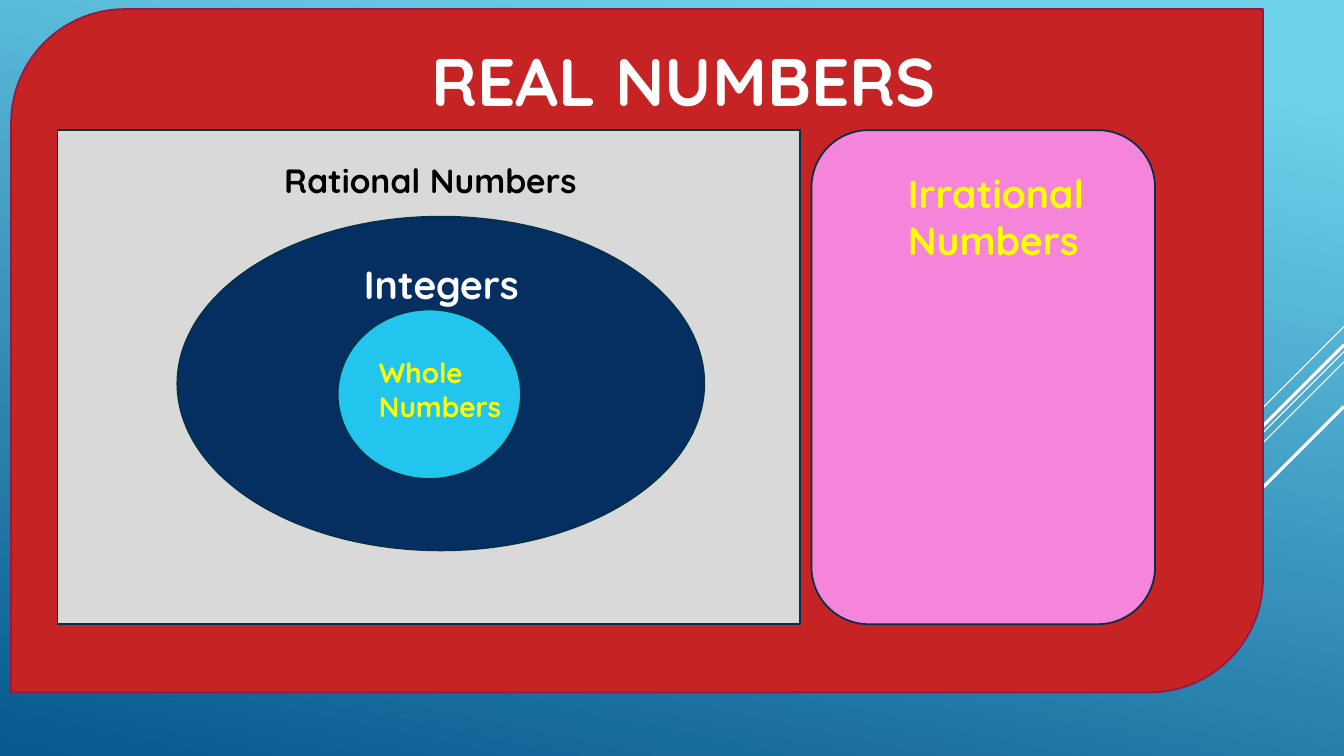
from lxml.etree import SubElement
from pptx import Presentation
from pptx.dml.color import RGBColor
from pptx.enum.shapes import MSO_CONNECTOR, MSO_SHAPE
from pptx.enum.text import MSO_ANCHOR, MSO_AUTO_SIZE, PP_ALIGN
from pptx.oxml.ns import qn
from pptx.util import Cm, Pt

WIDTH, HEIGHT = 33.87, 19.05
WHITE, BLACK, YELLOW, NAVY = "FFFFFF", "000000", "FFFF00", "043148"


def color(value):
    return RGBColor.from_string(value)


class SetDiagram:
    """Draws on one slide with a shared font and outline; lengths in cm."""

    font_name = "Quicksand"
    outline_width = 1.25

    def __init__(self, page):
        self.page = page

    def background(self, start, end, angle):
        fill = self.page.background.fill
        fill.gradient()
        fill.gradient_angle = angle
        for stop, (position, value) in zip(fill.gradient_stops, (start, end)):
            stop.position = position
            stop.color.rgb = color(value)

    def diagonal(self, top, length, width):
        """A 45 degree line running down and left from the right edge."""
        line = self.page.shapes.add_connector(
            MSO_CONNECTOR.STRAIGHT, Cm(WIDTH), Cm(top),
            Cm(WIDTH - length), Cm(top + length))
        line.line.color.rgb = color(WHITE)
        line.line.width = Pt(width)
        SubElement(line.element.spPr, qn("a:effectLst"))

    def region(self, kind, bounds, fill, outline=NAVY):
        shape = self.page.shapes.add_shape(kind, *map(Cm, bounds))
        shape.shadow.inherit = False
        shape.fill.solid()
        shape.fill.fore_color.rgb = color(fill)
        shape.line.color.rgb = color(outline)
        shape.line.width = Pt(self.outline_width)

    def set_text(self, frame, text, size, value, align=PP_ALIGN.LEFT):
        frame.text = text
        frame.word_wrap = True
        for paragraph in frame.paragraphs:
            paragraph.alignment = align
            paragraph.font.name = self.font_name
            paragraph.font.size = Pt(size)
            paragraph.font.bold = True
            paragraph.font.color.rgb = color(value)

    def title(self, text, bounds, size, value):
        title = self.page.shapes.title
        title.left, title.top, title.width, title.height = map(Cm, bounds)
        self.set_text(title.text_frame, text, size, value, PP_ALIGN.CENTER)
        title.text_frame.vertical_anchor = MSO_ANCHOR.MIDDLE
        title.text_frame.auto_size = MSO_AUTO_SIZE.NONE
        # Bring the title in front of the regions drawn so far
        title.element.getparent().append(title.element)

    def label(self, text, bounds, size, value):
        box = self.page.shapes.add_textbox(*map(Cm, bounds))
        self.set_text(box.text_frame, text, size, value)
        box.text_frame.auto_size = MSO_AUTO_SIZE.SHAPE_TO_FIT_TEXT


def main():
    deck = Presentation()
    deck.slide_width, deck.slide_height = Cm(WIDTH), Cm(HEIGHT)
    diagram = SetDiagram(deck.slides.add_slide(deck.slide_layouts[5]))

    # Backdrop
    diagram.background((0.1, "6ED2EB"), (1, "06588E"), 258)
    for top, length, width in ((8.23, 2.54, 0.75), (8.86, 8.28, 0.75),
                               (9.12, 5.26, 0.75), (8.69, 4.85, 2.25),
                               (10.24, 3.53, 2.25)):
        diagram.diagonal(top, length, width)

    # Real numbers
    diagram.region(MSO_SHAPE.ROUND_2_DIAG_RECTANGLE,
                   (0.28, 0.23, 31.55, 17.22), "C62324", "921A46")
    diagram.title("REAL NUMBERS", (5.38, -0.1, 23.7, 4.19), 48, WHITE)

    # Rational numbers, with integers and whole numbers nested inside
    diagram.region(MSO_SHAPE.RECTANGLE, (1.45, 3.28, 18.72, 12.45), "D9D9D9")
    diagram.region(MSO_SHAPE.OVAL, (4.47, 5.46, 13.28, 8.41), "052F61")
    diagram.region(MSO_SHAPE.OVAL, (8.51, 7.8, 4.62, 4.27), "22C5ED")
    diagram.label("Whole\nNumbers", (9.3, 8.84, 3.96, 1.96), 20, YELLOW)
    diagram.label("Integers", (8.92, 6.43, 4.5, 1.45), 28, WHITE)
    diagram.label("Rational Numbers", (6.91, 3.91, 8.41, 1.27), 24, BLACK)

    # Irrational numbers
    diagram.region(MSO_SHAPE.ROUNDED_RECTANGLE,
                   (20.45, 3.28, 8.66, 12.45), "F585DB")
    diagram.label("Irrational\nNumbers", (22.63, 4.14, 5.21, 2.64), 28, YELLOW)

    deck.save("out.pptx")


if __name__ == "__main__":
    main()
